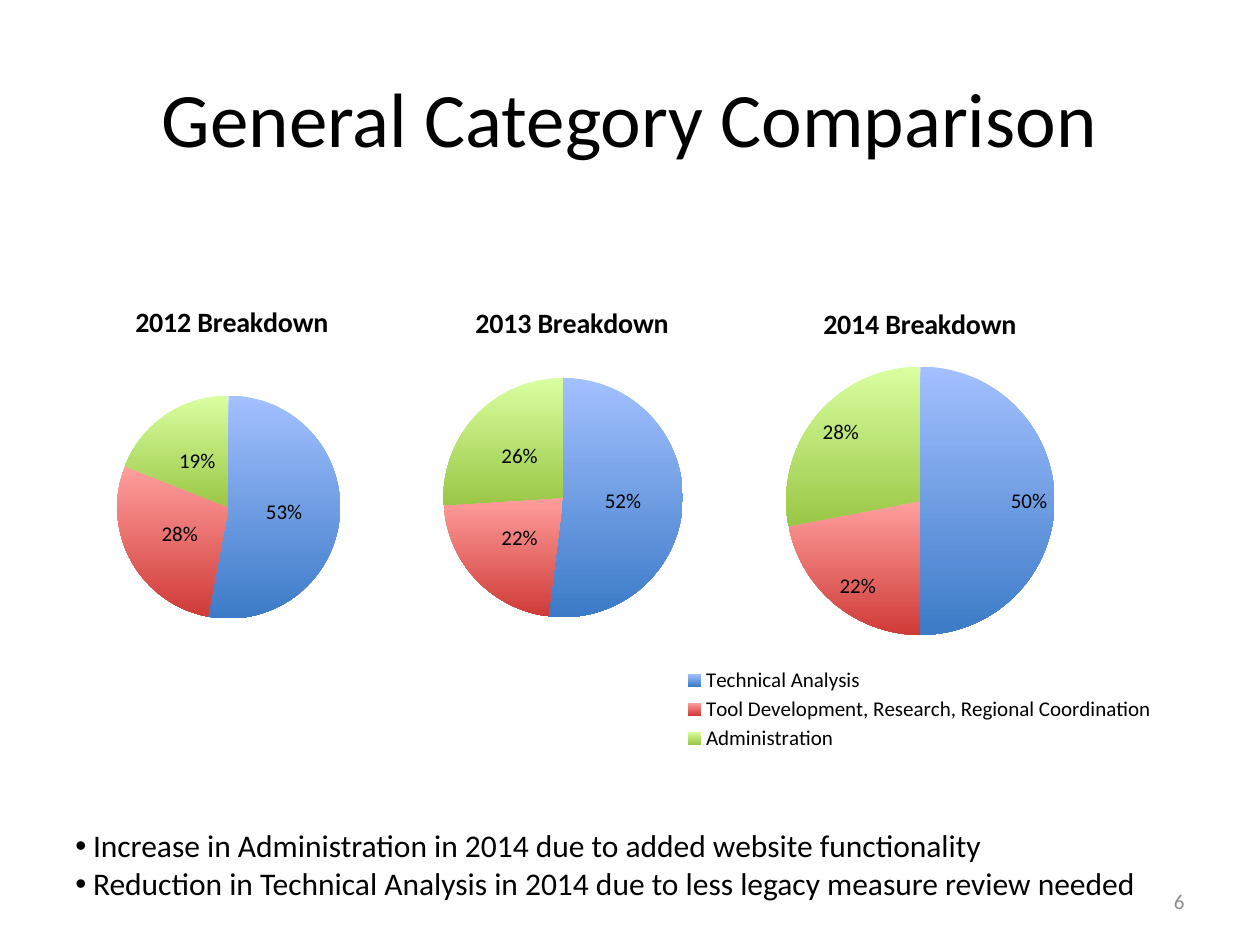
from pptx import Presentation
from pptx.chart.data import CategoryChartData
from pptx.dml.color import RGBColor
from pptx.enum.chart import XL_CHART_TYPE as ChartType
from pptx.enum.chart import XL_LABEL_POSITION as LabelPosition
from pptx.enum.chart import XL_LEGEND_POSITION as LegendPosition
from pptx.enum.text import MSO_ANCHOR as Anchor
from pptx.enum.text import PP_ALIGN as Align
from pptx.oxml import parse_xml
from pptx.oxml.ns import nsdecls, qn
from pptx.util import Inches, Pt

FONT = "Calibri"
CATEGORIES = ["Technical Analysis", "Tool Development, Research, Regional Coordination", "Administration"]
SLICE_GRADIENTS = [("A3C0FF", "3C7BC7"), ("FF9F9D", "CF3B37"), ("D9FFA0", "9AC746")]
BULLETS = [
    "Increase in Administration in 2014 due to added website functionality",
    "Reduction in Technical Analysis in 2014 due to less legacy measure review needed",
]
PIES = [
    {"year": 2013, "values": (0.52, 0.22, 0.26), "box": (3.18, 2.26, 2.72, 2.88),
     "pie": (3.52, 3.0, 1.9, 1.9), "labels": LabelPosition.CENTER},
    {"year": 2012, "values": (0.53, 0.28, 0.19), "box": (0.5, 2.25, 2.68, 2.88),
     "pie": (0.93, 3.14, 1.77, 1.77), "labels": LabelPosition.CENTER},
    {"year": 2014, "values": (0.5, 0.22, 0.28), "box": (5.1, 2.25, 4.4, 3.76),
     "pie": (6.24, 2.91, 2.13, 2.13), "labels": LabelPosition.INSIDE_END,
     "legend": (5.4, 5.27, 3.8, 0.72)},
]


def color(value):
    """Turn a hex string into a colour."""
    return RGBColor.from_string(value)


def apply(target, values):
    """Set every attribute in a dict of format values."""
    for name, value in values.items():
        setattr(target, name, value)


def format_font(font, size, hue="000000", bold=False):
    """Give a font the typeface, size, colour and weight."""
    apply(font, {"name": FONT, "size": Pt(size), "bold": bold})
    font.color.rgb = color(hue)


def place(shape, box):
    """Move and size a shape, in inches."""
    apply(shape, dict(zip(("left", "top", "width", "height"), map(Inches, box))))


def add_title(page, text):
    """Fill and format the title placeholder."""
    title = page.shapes.title
    place(title, (0.5, 0.3, 9, 1.25))
    title.text_frame.vertical_anchor = Anchor.MIDDLE
    para = title.text_frame.paragraphs[0]
    para.alignment = Align.CENTER
    span = para.add_run()
    span.text = text
    format_font(span.font, 44)


def add_text(page, box, lines, size, hue="000000", align=Align.LEFT, anchor=Anchor.TOP):
    """Add a wrapped text box and return its paragraphs."""
    frame = page.shapes.add_textbox(*map(Inches, box)).text_frame
    apply(frame, {"word_wrap": True, "vertical_anchor": anchor})
    for index, line in enumerate(lines):
        para = frame.add_paragraph() if index else frame.paragraphs[0]
        para.alignment = align
        span = para.add_run()
        span.text = line
        format_font(span.font, size, hue)
    return frame.paragraphs


def add_bullet(para):
    """Give a paragraph a round bullet with a hanging indent."""
    props = para._p.get_or_add_pPr()
    indent = Inches(0.14)
    props.set("marL", str(indent))
    props.set("indent", str(-indent))
    props.append(parse_xml(f'<a:buFont {nsdecls("a")} typeface="Arial"/>'))
    props.append(parse_xml(f'<a:buChar {nsdecls("a")} char="•"/>'))


def set_layout(part, index, box, chart_box, target=""):
    """Fix the place of a chart part, given in slide inches."""
    for old in part.findall(qn("c:layout")):
        part.remove(old)
    left, top, width, height = chart_box
    fractions = {"x": (box[0] - left) / width, "y": (box[1] - top) / height,
                 "w": box[2] / width, "h": box[3] / height}
    sizes = "".join(f'<c:{name} val="{value:.4f}"/>' for name, value in fractions.items())
    part.insert(index, parse_xml(
        f'<c:layout {nsdecls("c")}><c:manualLayout>{target}'
        f'<c:xMode val="edge"/><c:yMode val="edge"/>{sizes}</c:manualLayout></c:layout>'))


def add_legend(chart, box, chart_box):
    """Show the legend below the pie."""
    chart.has_legend = True
    apply(chart.legend, {"position": LegendPosition.BOTTOM, "include_in_layout": False})
    format_font(chart.legend.font, 12)
    set_layout(chart.legend._element, 1, box, chart_box)


def add_pie(page, year, values, box, pie, labels, legend=None):
    """Add one year's pie chart with gradient slices."""
    name = f"{year} Breakdown"
    data = CategoryChartData(number_format="0%")
    data.categories = CATEGORIES if legend else ["1", "2", "3"]
    data.add_series(name, values)
    chart = page.shapes.add_chart(ChartType.PIE, *map(Inches, box), data).chart
    format_font(chart.font, 12)
    chart.has_title = True
    chart.chart_title.text_frame.text = name
    format_font(chart.chart_title.text_frame.paragraphs[0].runs[0].font, 16, bold=True)

    plot = chart.plots[0]
    apply(plot, {"vary_by_categories": True, "has_data_labels": True})
    apply(plot.data_labels, {"show_value": True, "show_percentage": False, "position": labels,
                             "number_format": "0%", "number_format_is_linked": False})
    format_font(plot.data_labels.font, 12)
    for index, stops in enumerate(SLICE_GRADIENTS):
        fill = plot.series[0].points[index].format.fill
        fill.gradient()
        fill.gradient_angle = 270
        for stop, hue in zip(fill.gradient_stops, stops):
            stop.color.rgb = color(hue)

    body = chart._chartSpace.find(qn("c:chart"))
    set_layout(body.find(qn("c:plotArea")), 0, pie, box, '<c:layoutTarget val="inner"/>')
    body.addnext(parse_xml(
        f'<c:spPr {nsdecls("c", "a")}><a:noFill/><a:ln><a:noFill/></a:ln></c:spPr>'))
    chart.has_legend = False
    if legend:
        add_legend(chart, legend, box)


def main():
    """Build and save the slide."""
    deck = Presentation()
    apply(deck, {"slide_width": Inches(10), "slide_height": Inches(7.5)})
    page = deck.slides.add_slide(deck.slide_layouts[5])
    add_title(page, "General Category Comparison")
    for pie in PIES:
        add_pie(page, **pie)
    for para in add_text(page, (0.5, 6.51, 9, 0.71), BULLETS, 18):
        add_bullet(para)
    add_text(page, (7.17, 6.95, 2.33, 0.4), ["6"], 12, "8C8C8C", Align.RIGHT, Anchor.MIDDLE)
    deck.save("out.pptx")


if __name__ == "__main__":
    main()
